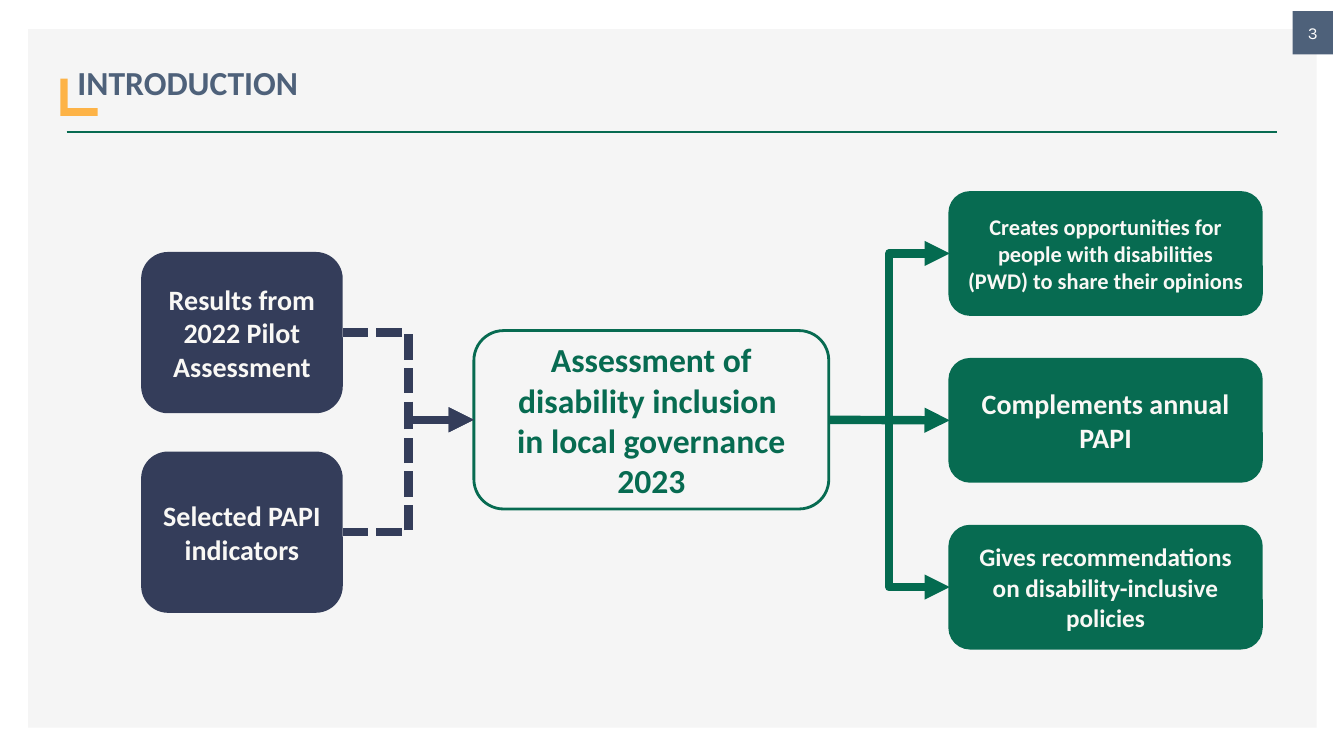
from lxml.etree import SubElement
from pptx import Presentation
from pptx.dml.color import RGBColor
from pptx.enum.dml import MSO_LINE
from pptx.enum.shapes import MSO_CONNECTOR, MSO_SHAPE
from pptx.enum.text import MSO_ANCHOR, PP_ALIGN
from pptx.oxml.ns import qn
from pptx.util import Inches, Pt

COLORS = {
    "panel": "F5F5F5", "slate": "4E617A", "amber": "FDB347", "navy": "343D5A",
    "green": "076B51", "arrow": "046B50", "cream": "F9F8F5", "white": "FFFFFF",
}
RECT, ROUND = MSO_SHAPE.RECTANGLE, MSO_SHAPE.ROUNDED_RECTANGLE


def add_box(kind, at, fill=None, line=None, text="", align=PP_ALIGN.CENTER, **font):
    sp = s.shapes.add_shape(kind, *(Inches(v) for v in at))
    sp.shadow.inherit = False
    if fill:
        sp.fill.solid()
        sp.fill.fore_color.rgb = RGBColor.from_string(COLORS[fill])
    else:
        sp.fill.background()
    if line:
        sp.line.color.rgb = RGBColor.from_string(COLORS[line])
        sp.line.width = Pt(2)
    else:
        sp.line.fill.background()
    if text:
        tf = sp.text_frame
        tf.word_wrap = True
        tf.vertical_anchor = MSO_ANCHOR.MIDDLE
        p = tf.paragraphs[0]
        p.text = text
        p.alignment = align
        color = font.pop("color")
        for name, value in {"name": "Calibri", "bold": True, **font}.items():
            setattr(p.font, name, value)
        p.font.color.rgb = RGBColor.from_string(COLORS[color])
    return sp


def add_line(kind, color, width, ends=(0, 0, 0, 0), joined=None, dash=None):
    """Draw a line; a joined pair of boxes is linked right side to left side by an arrow."""
    cx = s.shapes.add_connector(kind, *(Inches(v) for v in ends))
    cx.line.color.rgb = RGBColor.from_string(COLORS[color])
    cx.line.width = Pt(width)
    if dash:
        cx.line.dash_style = dash
    if joined:
        cx.begin_connect(joined[0], 3)
        cx.end_connect(joined[1], 1)
        SubElement(cx.line._get_or_add_ln(), qn("a:tailEnd"), type="triangle")
    SubElement(cx._element.spPr, qn("a:effectLst"))


prs = Presentation()
prs.slide_width, prs.slide_height = Inches(13.33), Inches(7.5)
s = prs.slides.add_slide(prs.slide_layouts[6])

# Frame and heading
add_box(RECT, (0.28, 0.29, 12.78, 6.93), "panel")
add_line(MSO_CONNECTOR.STRAIGHT, "green", 2, (0.66, 1.31, 12.67, 1.31))
add_box(RECT, (12.82, 0.11, 0.4, 0.43), "slate", text="3",
        name="Karla", size=Pt(12), bold=False, color="white")
add_box(RECT, (0.6, 0.78, 0.37, 0.37), "amber")
title = add_box(RECT, (0.67, 0.36, 9, 0.71), "panel", text="INTRODUCTION",
                align=PP_ALIGN.LEFT, size=Pt(24), color="slate")
title.text_frame.paragraphs[0].line_spacing = 1.5

# Assessment in the centre, inputs on the left, outcomes on the right
assessment = add_box(ROUND, (4.7, 3.28, 3.52, 1.77), line="green", size=Pt(24), color="green",
                     text="Assessment of disability inclusion \vin local governance 2023")

inputs = ["Results from 2022 Pilot Assessment", "Selected PAPI indicators"]
for i, text in enumerate(inputs):
    source = add_box(ROUND, (1.4, 2.5 + i * 1.98, 2, 1.6), "navy",
                     text=text, size=Pt(20), color="cream")
    add_line(MSO_CONNECTOR.ELBOW, "navy", 6, joined=(source, assessment),
             dash=MSO_LINE.SQUARE_DOT)

outcomes = [
    ("Creates opportunities for people with disabilities (PWD) to share their opinions",
     16, MSO_CONNECTOR.ELBOW),
    ("Complements annual PAPI", 20, MSO_CONNECTOR.STRAIGHT),
    ("Gives recommendations on disability-inclusive policies", 18, MSO_CONNECTOR.ELBOW),
]
for i, (text, size, kind) in enumerate(outcomes):
    outcome = add_box(ROUND, (9.42, 1.91 + i * 1.655, 3.09, 1.21), "green", "green",
                      text=text, size=Pt(size), color="cream")
    add_line(kind, "arrow", 6, joined=(assessment, outcome))

prs.save("out.pptx")
